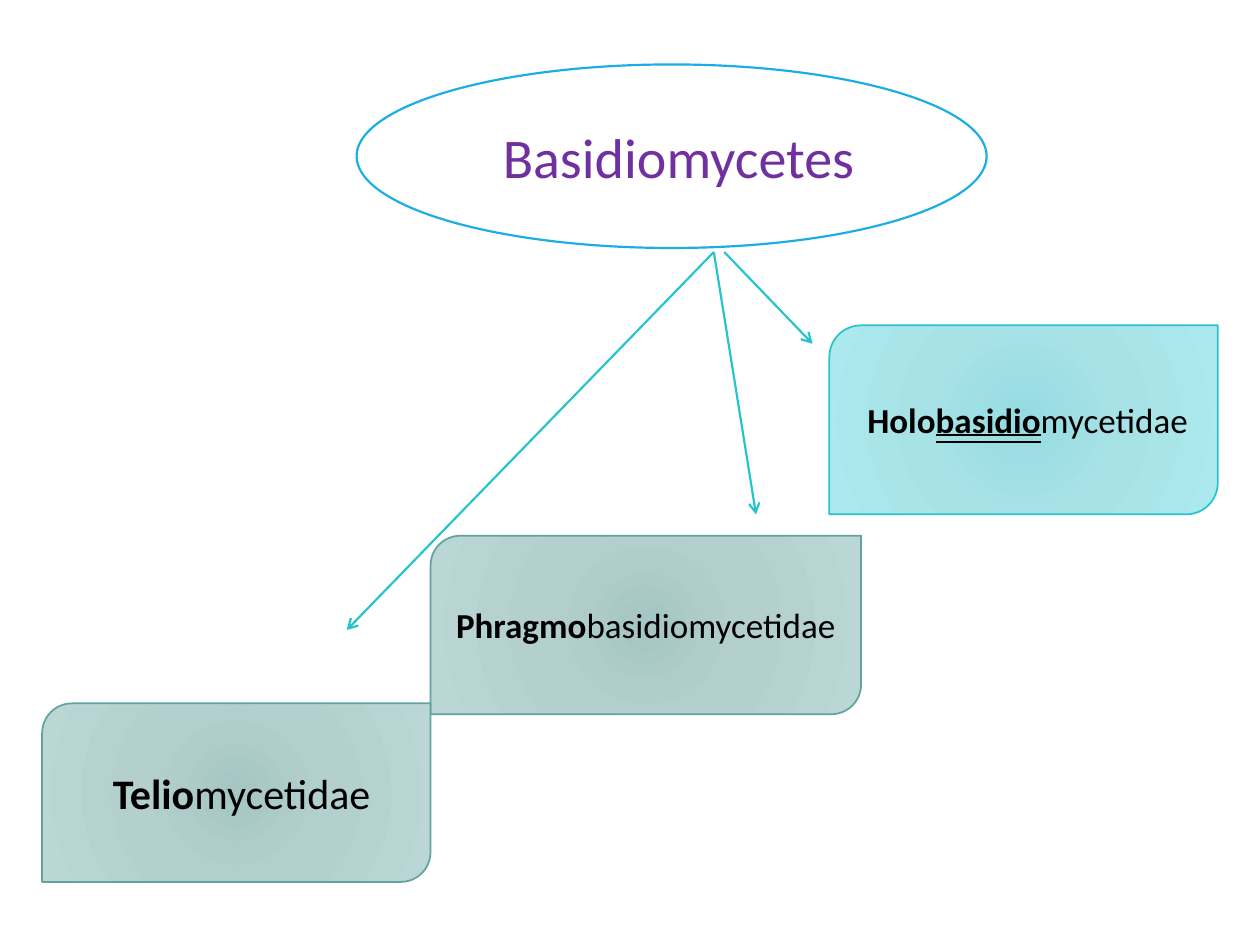
"""Build a slide showing the three subclasses of Basidiomycetes."""
from lxml.etree import SubElement
from pptx import Presentation
from pptx.dml.color import RGBColor
from pptx.enum.shapes import MSO_CONNECTOR as Connector, MSO_SHAPE as Preset
from pptx.enum.text import MSO_ANCHOR as Anchor, MSO_UNDERLINE as Underline, PP_ALIGN as Align
from pptx.oxml.ns import qn
from pptx.util import Cm, Pt

FONT = "Calibri"
TITLE_BOX = (7.19, 1.3, 12.7, 3.7)
TITLE_RUNS = [("Basidiomycetes ", 32, False, False)]
AQUA = ("28C4CC", ["95DBE0", "A7E2E7", "ACE9EE"])
SAGE = ("62A39F", ["A5C6C4", "B4D0CE", "BAD7D5"])
STOPS = [0, 45, 100]

SUBCLASSES = [
    ((16.72, 6.56, 7.83, 3.81), AQUA, [
        ("Holo", 20, True, False),
        ("basidio", 20, True, True),
        ("mycetidae", 20, False, False),
        (" ", 18, False, False),
    ]),
    ((8.68, 10.8, 8.68, 3.6), SAGE, [
        ("Phragmo", 20, True, False),
        ("basidiomycetidae", 20, False, False),
    ]),
    ((0.85, 14.18, 7.83, 3.6), SAGE, [
        ("Telio", 24, True, False),
        ("mycetidae ", 24, False, False),
    ]),
]

ARROWS = [
    ((14.6, 5.08), (16.38, 6.93)),
    ((14.39, 5.08), (15.24, 10.37)),
    ((14.39, 5.08), (6.99, 12.7)),
]


def color(value):
    return RGBColor.from_string(value)


def set_line(line, value, width):
    line.color.rgb = color(value)
    line.width = Pt(width)


def set_radial_fill(shape, values):
    shape.fill.gradient()
    gradient = shape._element.spPr.find(qn("a:gradFill"))
    for child in list(gradient):
        gradient.remove(child)
    stops = SubElement(gradient, qn("a:gsLst"))
    for position, value in zip(STOPS, values):
        stop = SubElement(stops, qn("a:gs"), pos=str(position * 1000))
        SubElement(stop, qn("a:srgbClr"), val=value)
    circle = SubElement(gradient, qn("a:path"), path="circle")
    SubElement(circle, qn("a:fillToRect"), {side: "100000" for side in "ltrb"})


def add_node(slide, preset, box, line_color, line_width, runs, text_color):
    shape = slide.shapes.add_shape(preset, *map(Cm, box))
    shape.shadow.inherit = False
    set_line(shape.line, line_color, line_width)
    frame = shape.text_frame
    frame.word_wrap = True
    frame.vertical_anchor = Anchor.MIDDLE
    paragraph = frame.paragraphs[0]
    paragraph.alignment = Align.CENTER
    paragraph._p.get_or_add_pPr().set("rtl", "1")
    for text, size, bold, underlined in runs:
        run = paragraph.add_run()
        run.text = text
        font = run.font
        font.name, font.size, font.bold = FONT, Pt(size), bold
        font.color.rgb = color(text_color)
        if underlined:
            font.underline = Underline.DOUBLE_LINE
    return shape


def add_arrow(slide, start, end):
    arrow = slide.shapes.add_connector(Connector.STRAIGHT, *map(Cm, start + end))
    set_line(arrow.line, AQUA[0], 1.25)
    SubElement(arrow.line._get_or_add_ln(), qn("a:tailEnd"), type="arrow")
    SubElement(arrow._element.spPr, qn("a:effectLst"))


def main():
    presentation = Presentation()
    presentation.slide_width, presentation.slide_height = Cm(25.4), Cm(19.05)
    slide = presentation.slides.add_slide(presentation.slide_layouts[6])

    title = add_node(slide, Preset.OVAL, TITLE_BOX, "1CADE4", 1.25, TITLE_RUNS, "7030A0")
    title.fill.solid()
    title.fill.fore_color.rgb = color("FFFFFF")

    for box, (line_color, gradient), runs in SUBCLASSES:
        subclass = add_node(slide, Preset.ROUND_2_DIAG_RECTANGLE, box, line_color, 1, runs, "000000")
        set_radial_fill(subclass, gradient)

    for start, end in ARROWS:
        add_arrow(slide, start, end)

    presentation.save("out.pptx")


if __name__ == "__main__":
    main()
